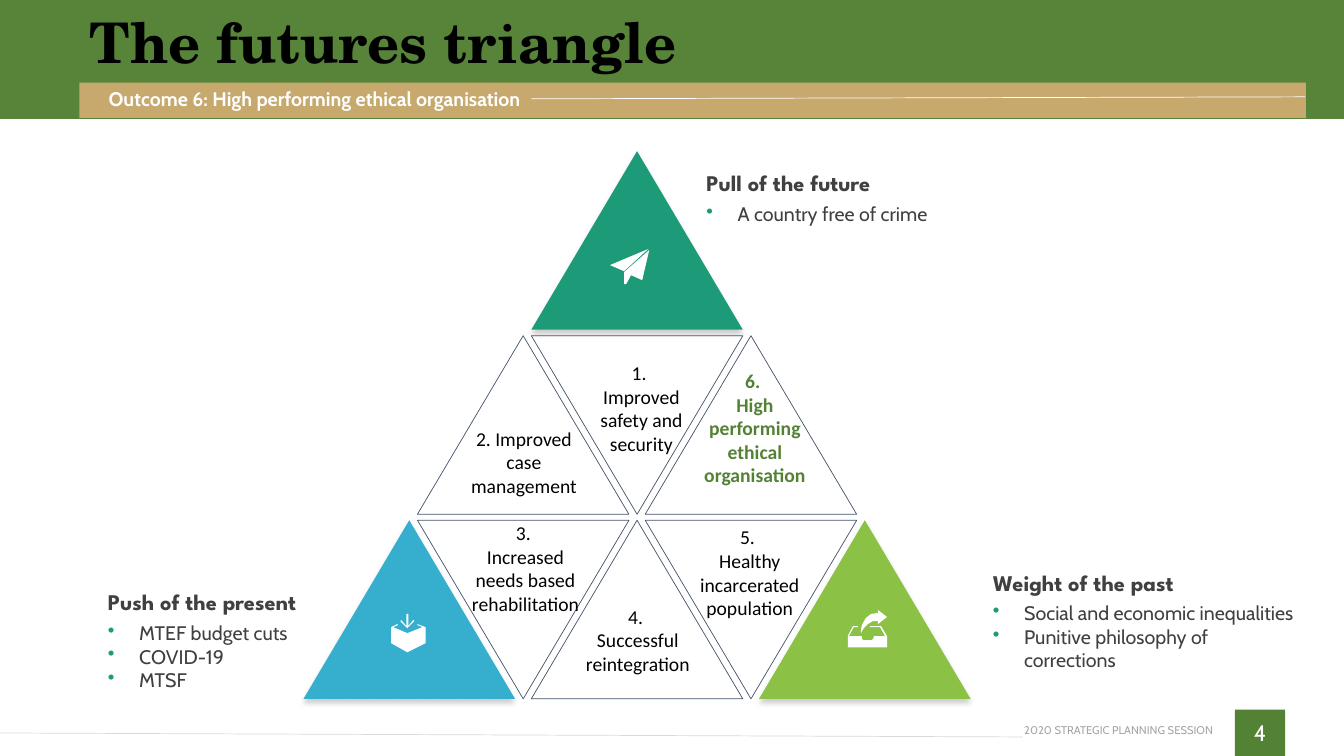
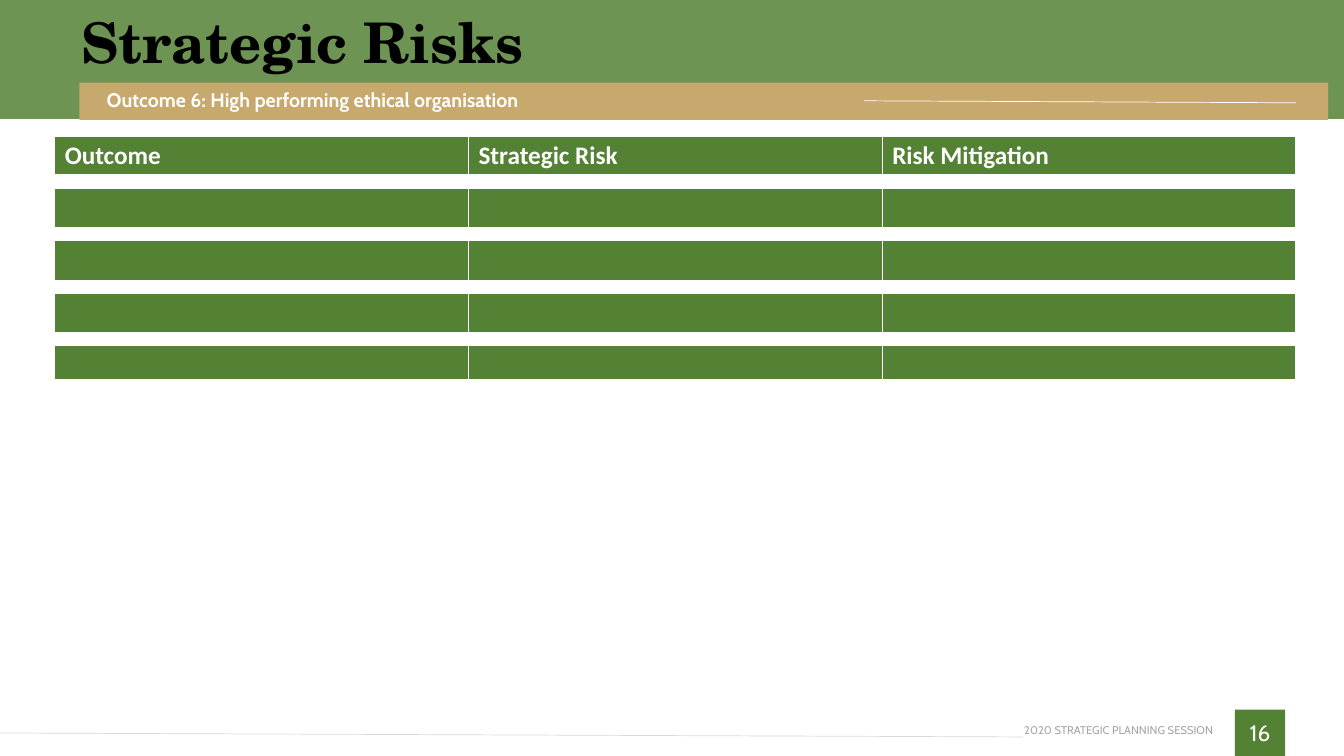
from lxml import etree
from pptx import Presentation
from pptx.dml.color import RGBColor
from pptx.enum import shapes, text
from pptx.oxml import ns
from pptx.util import Cm, Pt

GREEN = RGBColor(0x54, 0x82, 0x35)
TAN = RGBColor(0xC7, 0xA9, 0x6E)
WHITE = RGBColor(0xFF, 0xFF, 0xFF)
BLACK = RGBColor(0, 0, 0)
DARK = RGBColor(0x40, 0x40, 0x40)
GREY = RGBColor(0xA6, 0xA6, 0xA6)
PALE = RGBColor(0xD9, 0xD9, 0xD9)
SLATE = RGBColor(0x44, 0x54, 0x6A)
TEAL = RGBColor(0x1D, 0x9A, 0x78)
BLUE = RGBColor(0x36, 0xAF, 0xCE)
LIME = RGBColor(0x8B, 0xC1, 0x45)

WIDE, HIGH = 33.87, 19.05
CABIN, SERIF, HEAD, BODY = "Cabin", "TeX Gyre Schola", "League Spartan", "Calibri"
LEFT, MID, RIGHT = text.PP_ALIGN.LEFT, text.PP_ALIGN.CENTER, text.PP_ALIGN.RIGHT
TOP, CENTRE = text.MSO_ANCHOR.TOP, text.MSO_ANCHOR.MIDDLE
RECT = shapes.MSO_SHAPE.RECTANGLE
TRIANGLE = shapes.MSO_SHAPE.ISOSCELES_TRIANGLE

# Triangle grid: size, and the step from one column or row to the next
SIDE, TALL, STEP, ROW = 5.33, 4.5, 2.87, 4.65
UNIT = Cm(0.0254)

# Icon outlines, in units from the corner of the triangle that holds them
PLANE = [
    [(78, 113), (92, 119), (116, 97)],
    [(92, 120), (92, 132), (94, 132), (99, 123), (110, 128), (117, 98)],
]
INBOX = [
    [(121, 106), (113, 103), (113, 104), (118, 106), (103, 112), (89, 106),
     (94, 104), (93, 103), (87, 106), (87, 122), (103, 131), (121, 122)],
    [(103, 107), (110, 100), (109, 99), (104, 105), (104, 93), (102, 93),
     (102, 105), (97, 99), (96, 100)],
]
OUTBOX = [
    [(127, 115), (121, 105), (110, 105), (110, 106), (120, 106), (125, 115),
     (114, 115), (113, 118), (111, 119), (104, 119), (102, 118), (102, 115),
     (89, 115), (94, 106), (98, 106), (98, 105), (93, 105), (88, 115),
     (88, 126), (127, 126)],
    [(101, 112), (104, 107), (108, 103), (113, 100), (118, 100), (118, 103),
     (127, 96), (118, 89), (118, 92), (111, 93), (106, 97), (102, 104),
     (101, 110)],
]

# Column, row, fill, icon
CORNERS = [(2, 0, TEAL, PLANE), (0, 2, BLUE, INBOX), (4, 2, LIME, OUTBOX)]

# Column, row, points down, label shift (x, y), label width, lines
OUTCOMES = [
    (2, 1, True, 0.11, 0.51, 2.77, ["1. ", "Improved safety and security"]),
    (1, 1, False, 0.02, 2.16, 3.25, ["2. Improved case management"]),
    (1, 2, True, 0.06, -0.11, 3.53, ["3. ", "Increased needs based rehabilitation"]),
    (2, 2, False, 0.02, 2, 3.71, ["4. ", "Successful reintegration"]),
    (3, 2, True, -0.03, 0, 3.84, ["5. ", "Healthy", "incarcerated population"]),
    (3, 1, False, 0.1, 0.71, 3.35, ["6. ", "High performing ethical organisation"]),
]
CURRENT = 6

FORCES = [
    (17.8, 4.27, "Pull of the future", ["A country free of crime"]),
    (25.02, 14.33, "Weight of the past",
     ["Social and economic inequalities", "Punitive philosophy of corrections"]),
    (2.72, 14.83, "Push of the present", ["MTEF budget cuts", "COVID-19", "MTSF"]),
]


def node(parent, tag, **attrs):
    return etree.SubElement(parent, ns.qn(tag), **attrs)


def write(frame, lines, size, font, color, bold=False, align=LEFT):
    frame.text = "\n".join(lines)
    for para in frame.paragraphs:
        para.alignment = align
        para.font.size, para.font.name = Pt(size), font
        para.font.bold, para.font.color.rgb = bold, color


def label(slide, x, y, w, h, lines, size, font, color, bold=False,
          align=LEFT, anchor=TOP, inset=(0, 0)):
    frame = slide.shapes.add_textbox(Cm(x), Cm(y), Cm(w), Cm(h)).text_frame
    frame.word_wrap, frame.vertical_anchor = True, anchor
    frame.margin_left = frame.margin_right = Cm(inset[0])
    frame.margin_top = frame.margin_bottom = Cm(inset[1])
    write(frame, lines, size, font, color, bold, align)
    return frame


def block(slide, x, y, w, h, color, kind=RECT):
    """Add a flat filled shape without outline."""
    shape = slide.shapes.add_shape(kind, Cm(x), Cm(y), Cm(w), Cm(h))
    shape.shadow.inherit = False
    shape.fill.solid()
    shape.fill.fore_color.rgb = color
    shape.line.fill.background()
    return shape


def rule(slide, start, end, color):
    ends = [Cm(n) for n in (*start, *end)]
    line = slide.shapes.add_connector(shapes.MSO_CONNECTOR.STRAIGHT, *ends)
    line.line.color.rgb, line.line.width = color, Pt(0.5)
    node(line._element.spPr, "a:effectLst")


def header(slide, title, left, alpha, bar, topic, start, end):
    """Add the green band, the tan bar (width, height), its topic and the title."""
    band = block(slide, 0, 0, WIDE, 3, GREEN)
    color = band._element.spPr.find(ns.qn("a:solidFill"))[0]
    node(color, "a:alpha", val=str(alpha * 1000))
    block(slide, 2, 2.08, *bar, TAN)
    label(slide, *topic, 18, 0.61, ["Outcome 6: High performing ethical organisation"],
          14, CABIN, WHITE, True, anchor=CENTRE)
    rule(slide, start, end, WHITE)
    name = label(slide, left, 0, 30, 2.27, [title], 40, SERIF, BLACK, True, anchor=CENTRE)
    name.paragraphs[0].line_spacing = 0.9


def footer(slide, number):
    rule(slide, (25.78, 18.57), (0, 18.47), PALE)
    label(slide, 25.78, 18.24, 4.8, 0.33, ["2020 STRATEGIC PLANNING SESSION"],
          8, CABIN, GREY, align=RIGHT, anchor=CENTRE)
    tab = block(slide, 31.12, 17.88, 1.27, HIGH - 17.88, GREEN)
    tab.text_frame.vertical_anchor = CENTRE
    tab.text_frame.margin_left = tab.text_frame.margin_right = 0
    write(tab.text_frame, [str(number)], 16, CABIN, WHITE, align=MID)


def icon(slide, x, y, parts):
    for points in parts:
        pen = slide.shapes.build_freeform(*points[0], scale=UNIT)
        pen.add_line_segments(points[1:], close=True)
        shape = pen.convert_to_shape(Cm(x), Cm(y))
        shape.shadow.inherit = False
        shape.fill.solid()
        shape.fill.fore_color.rgb = WHITE
        shape.line.fill.background()


def drop(shape):
    """Give the shape a soft shadow below."""
    effects = shape._element.spPr.find(ns.qn("a:effectLst"))
    shade = node(effects, "a:outerShdw", blurRad=str(Pt(4)), dist=str(Pt(3)),
                 dir="5400000", algn="t", rotWithShape="0")
    node(node(shade, "a:srgbClr", val=str(BLACK)), "a:alpha", val="20000")


def pyramid(slide, left, top):
    for col, row, color, parts in CORNERS:
        x, y = left + col * STEP, top + row * ROW
        drop(block(slide, x, y, SIDE, TALL, color, TRIANGLE))
        icon(slide, x, y, parts)
    for col, row, down, dx, dy, w, lines in OUTCOMES:
        x, y = left + col * STEP, top + row * ROW
        cell = block(slide, x, y, SIDE, TALL, WHITE, TRIANGLE)
        cell.fill.background()
        cell.line.color.rgb, cell.line.width = SLATE, Pt(0.5)
        cell.rotation = 180 if down else 0
    for num, (col, row, down, dx, dy, w, lines) in enumerate(OUTCOMES, 1):
        x, y = left + col * STEP, top + row * ROW
        now = num == CURRENT
        label(slide, x + (SIDE - w) / 2 + dx, y + dy, w, 2.6, lines, 14, BODY,
              GREEN if now else BLACK, now, MID, inset=(0.25, 0.13))


def force(slide, x, y, title, items):
    """Add a heading with its bulleted list."""
    label(slide, x, y, 7.62, 0.69, [title], 16, HEAD, DARK, True)
    frame = label(slide, x, y + 0.82, 7.62, 0.6 * len(items), items, 14, CABIN, DARK)
    for para in frame.paragraphs:
        props = para._p.get_or_add_pPr()
        props.set("marL", str(Cm(0.79)))
        props.set("indent", str(-Cm(0.79)))
        dot = etree.Element(ns.qn("a:buClr"))
        node(dot, "a:srgbClr", val=str(TEAL))
        props.insert(0, dot)
        dot.addnext(etree.Element(ns.qn("a:buChar"), char="•"))


def border(cell, base):
    props = cell._tc.get_or_add_tcPr()
    for edge, size in zip("LRTB", (1, 1, 1, base)):
        line = node(props, "a:ln" + edge, w=str(Pt(size)))
        node(node(line, "a:solidFill"), "a:srgbClr", val=str(WHITE))


def risks(slide, x, y, w, heads):
    """Add the table: green rows parted by thin white ones."""
    sizes = [0.99, 0.33] * 4 + [0.86]
    frame = slide.shapes.add_table(len(sizes), len(heads), Cm(x), Cm(y), Cm(w), Cm(sum(sizes)))
    table = frame.table
    table.horz_banding = False
    for col in table.columns:
        col.width = Cm(w / len(heads))
    for r, size in enumerate(sizes):
        gap = r % 2 == 1
        table.rows[r].height = Cm(size)
        for c, head in enumerate(heads):
            cell = table.cell(r, c)
            border(cell, 3 if r == 0 else 1)
            cell.fill.solid()
            cell.fill.fore_color.rgb = WHITE if gap else GREEN
            cell.margin_top = cell.margin_bottom = Cm(0 if gap else 0.1)
            if r == 0:
                write(cell.text_frame, [head], 18, BODY, WHITE, True)
            else:
                para = cell.text_frame.paragraphs[0]
                node(para._p, "a:endParaRPr", sz="400" if gap else "1200")


def main():
    deck = Presentation()
    deck.slide_width, deck.slide_height = Cm(WIDE), Cm(HIGH)
    blank = deck.slide_layouts[6]

    slide = deck.slides.add_slide(blank)
    header(slide, "The futures triangle", 2.26, 98, (30.91, 0.89), (2.74, 2.18),
           (13.39, 2.49), (32.89, 2.44))
    for item in FORCES:
        force(slide, *item)
    pyramid(slide, 7.65, 3.81)
    footer(slide, 4)

    slide = deck.slides.add_slide(blank)
    header(slide, "Strategic Risks", 2.06, 85, (31.47, 0.94), (2.69, 2.21),
           (21.77, 2.54), (32.66, 2.59))
    risks(slide, 1.38, 3.43, 31.28, ["Outcome", "Strategic Risk", "Risk Mitigation"])
    footer(slide, 16)

    deck.save("out.pptx")


if __name__ == "__main__":
    main()
